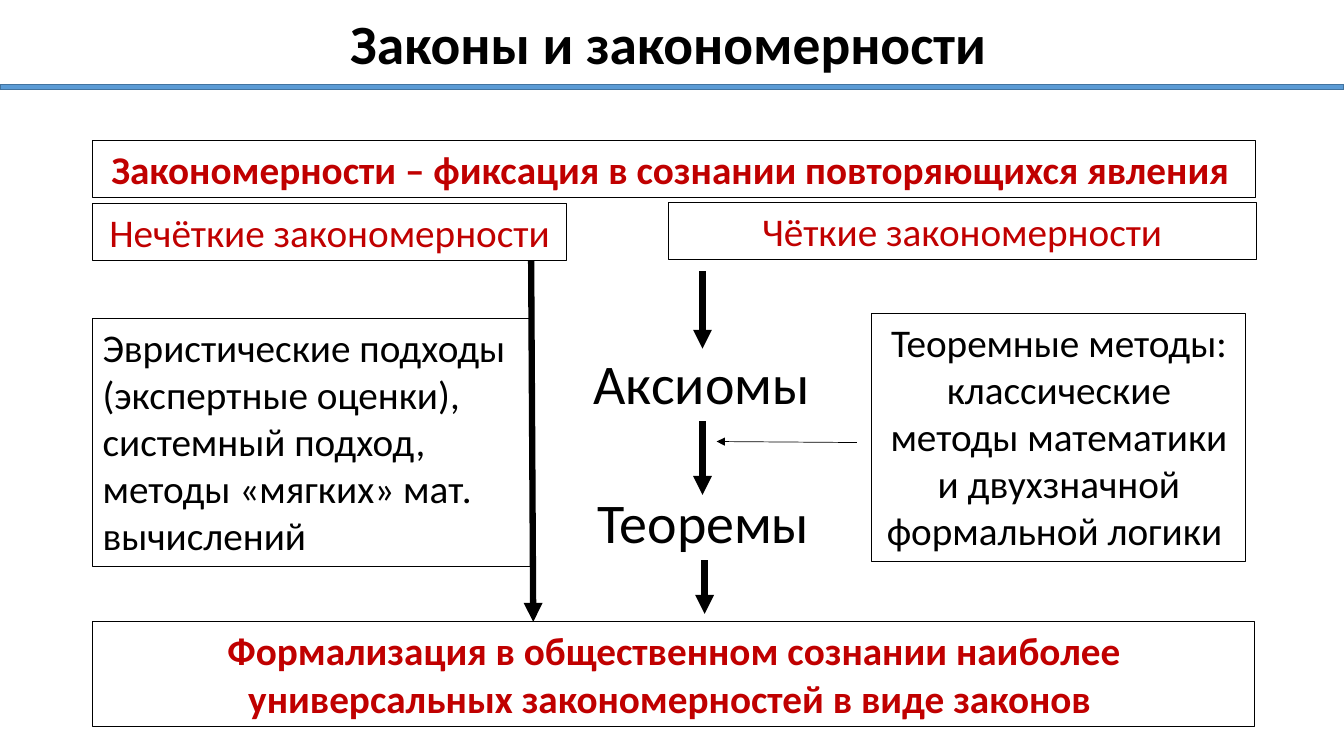
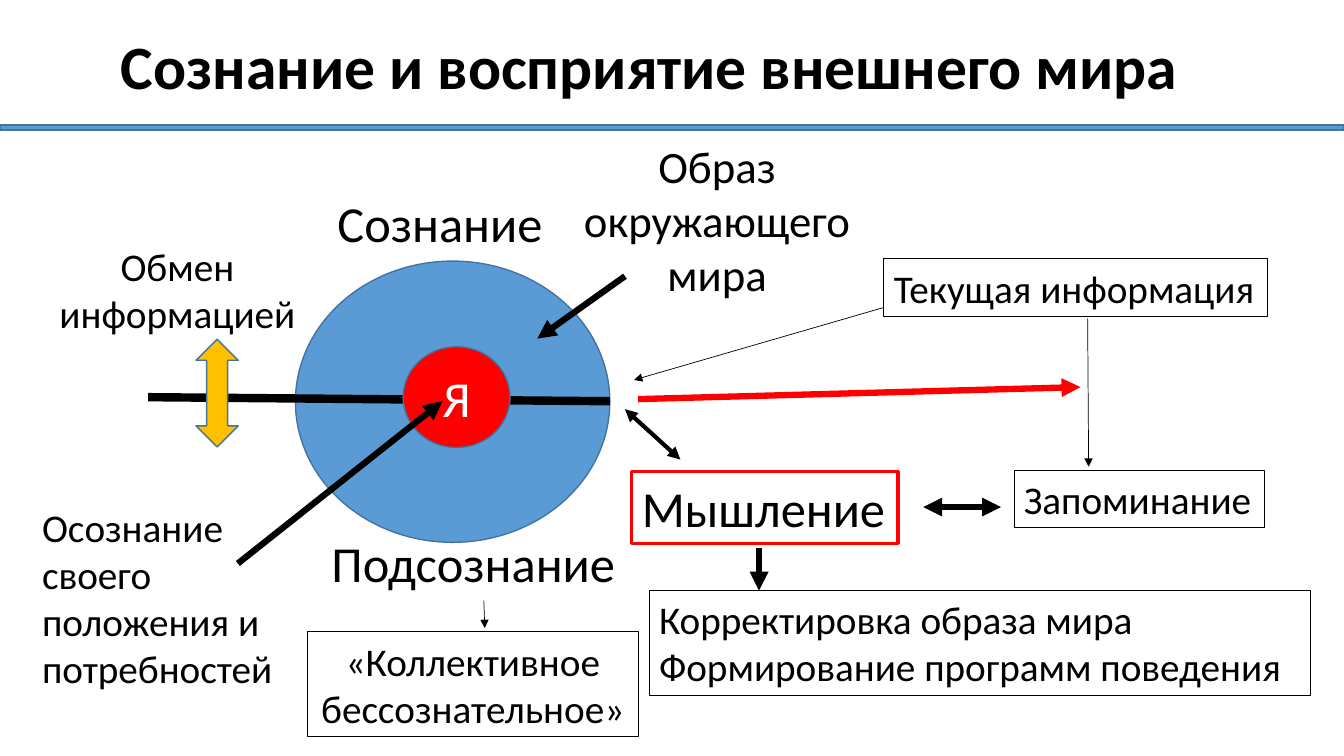
"""Build two slides on regularities, laws and consciousness."""

from dataclasses import dataclass
from typing import Optional, Union

from lxml import etree
from pptx import Presentation
from pptx import util as u
from pptx.dml.color import RGBColor
from pptx.enum import shapes, text
from pptx.oxml import ns
from pptx.shapes.autoshape import Shape
from pptx.slide import Slide
from pptx.text.text import TextFrame


@dataclass(frozen=True)
class Theme:
    font: str = "Calibri"
    black: str = "000000"
    white: str = "FFFFFF"
    dark_red: str = "C00000"
    red: str = "FF0000"
    blue: str = "5B9BD5"
    outline: str = "43739E"
    amber: str = "FFC000"
    body: float = 28
    large: float = 32
    term: float = 36
    stage: float = 40
    title: float = 44
    title_small: float = 39.6
    hairline: float = 0.5
    frame: float = 0.75
    thick: float = 4.5
    width: float = 960
    height: float = 540
    band: float = 3.6


THEME = Theme()
LEFT, CENTER = text.PP_ALIGN.LEFT, text.PP_ALIGN.CENTER
PRESET = shapes.MSO_SHAPE
Area = tuple[float, float, float, float]
Point = tuple[float, float]


@dataclass(frozen=True)
class Label:
    words: str
    area: Area
    size: float = THEME.body
    color: str = THEME.black
    bold: bool = False
    align: text.PP_ALIGN = CENTER
    wrap: bool = True
    border: Optional[str] = THEME.black
    border_width: float = THEME.frame


@dataclass(frozen=True)
class Figure:
    preset: shapes.MSO_SHAPE
    area: Area
    fill: str = THEME.blue
    words: str = ""


@dataclass(frozen=True)
class Arrow:
    start: Point
    end: Point
    width: float = THEME.thick
    color: str = THEME.black
    head: bool = False
    tail: bool = True


Piece = Union[Label, Figure, Arrow]


@dataclass(frozen=True)
class Page:
    title: str
    title_area: Area
    title_size: float
    band_top: float
    pieces: tuple[Piece, ...]


def write_text(frame: TextFrame, words: str, *, size: float, color: str = THEME.black,
               bold: bool = False, align: text.PP_ALIGN = CENTER, wrap: bool = True,
               grow: bool = False, middle: bool = False, spacing: float = 1.0) -> None:
    """Fill a text frame, one paragraph for each line of words."""
    frame.word_wrap = wrap
    frame.auto_size = text.MSO_AUTO_SIZE.SHAPE_TO_FIT_TEXT if grow else text.MSO_AUTO_SIZE.NONE
    frame.vertical_anchor = text.MSO_ANCHOR.MIDDLE if middle else text.MSO_ANCHOR.TOP
    for index, line in enumerate(words.split("\n")):
        para = frame.add_paragraph() if index else frame.paragraphs[0]
        para.alignment = align
        para.line_spacing = spacing
        span = para.add_run()
        span.text = line
        span.font.name = THEME.font
        span.font.size = u.Pt(size)
        span.font.bold = bold
        span.font.color.rgb = RGBColor.from_string(color)


def add_box(page: Slide, area: Area) -> Shape:
    """Add an empty text box."""
    return page.shapes.add_textbox(*map(u.Pt, area))


def draw_label(page: Slide, label: Label) -> None:
    """Draw text with an optional frame."""
    box = add_box(page, label.area)
    if label.border:
        box.line.color.rgb = RGBColor.from_string(label.border)
        box.line.width = u.Pt(label.border_width)
    write_text(box.text_frame, label.words, size=label.size, color=label.color,
               bold=label.bold, align=label.align, wrap=label.wrap, grow=True)


def draw_figure(page: Slide, figure: Figure) -> None:
    """Draw a filled preset shape."""
    shape = page.shapes.add_shape(figure.preset, *map(u.Pt, figure.area))
    shape.shadow.inherit = False
    shape.fill.solid()
    shape.fill.fore_color.rgb = RGBColor.from_string(figure.fill)
    shape.line.color.rgb = RGBColor.from_string(THEME.outline)
    shape.line.width = u.Pt(1)
    if figure.words:
        write_text(shape.text_frame, figure.words, size=THEME.term,
                   color=THEME.white, middle=True)


def draw_arrow(page: Slide, arrow: Arrow) -> None:
    """Draw a straight line with triangles at the chosen ends."""
    connector = page.shapes.add_connector(
        shapes.MSO_CONNECTOR.STRAIGHT, *map(u.Pt, arrow.start + arrow.end))
    connector.line.color.rgb = RGBColor.from_string(arrow.color)
    connector.line.width = u.Pt(arrow.width)
    properties = connector._element.spPr
    stroke = properties.find(ns.qn("a:ln"))
    for shown, tag in ((arrow.head, "a:headEnd"), (arrow.tail, "a:tailEnd")):
        if shown:
            etree.SubElement(stroke, ns.qn(tag), type="triangle")
    etree.SubElement(properties, ns.qn("a:effectLst"))


DRAWERS = {Label: draw_label, Figure: draw_figure, Arrow: draw_arrow}

LAWS = Page("Законы и закономерности", (63.4, 13.7, 828, 39.6), THEME.title_small, 60.5, (
    Label("Закономерности – фиксация в сознании повторяющихся явления ",
          (66.2, 100.1, 830.9, 41), color=THEME.dark_red, bold=True),
    Label("Формализация в общественном сознании наиболее универсальных "
          "закономерностей в виде законов ",
          (66.2, 444.2, 830.2, 74.9), color=THEME.dark_red, bold=True),
    Label("Аксиомы", (416.9, 245.5, 170.6, 55.4), THEME.stage,
          align=LEFT, wrap=False, border=None),
    Label("Теоремы", (419.8, 344.9, 167, 55.4), THEME.stage,
          align=LEFT, wrap=False, border=None),
    Arrow((501.8, 301), (501.8, 353.5)),
    Label("Теоремные методы: классические методы математики и двухзначной "
          "формальной логики ", (622.8, 223.9, 267.1, 177.1)),
    Arrow((612, 316.1), (511.9, 315.4), THEME.hairline),
    Arrow((501.8, 193.7), (501.8, 249.1)),
    Arrow((503.3, 400.3), (503.3, 438.5)),
    Label("Нечёткие закономерности", (66.2, 145.4, 338.4, 41), color=THEME.dark_red),
    Arrow((379.4, 186.5), (380.9, 444.2)),
    Label("Эвристические подходы (экспертные оценки), системный подход, "
          "методы «мягких» мат. вычислений", (66.2, 227.5, 313.9, 177.1), align=LEFT),
    Label("Чёткие закономерности", (477.4, 144.7, 419.8, 41), color=THEME.dark_red),
))

MIND = Page("Сознание и восприятие внешнего мира", (23, 9.4, 882.7, 79.9), THEME.title, 89.3, (
    Figure(PRESET.OVAL, (211, 186.5, 224.6, 200.9)),
    Arrow((105.8, 283.7), (435.6, 286.6), 6, tail=False),
    Figure(PRESET.OVAL, (288, 247.7, 76.3, 72), THEME.red, "Я"),
    Label("Сознание", (234, 133.9, 162.7, 51.1), THEME.term,
          align=LEFT, wrap=False, border=None),
    Label("Подсознание", (229.7, 376.6, 219.6, 51.1), THEME.term,
          align=LEFT, wrap=False, border=None),
    Label("Образ окружающего мира", (401, 95.8, 222.5, 123.8), THEME.large, border=None),
    Arrow((446.4, 197.3), (383.8, 241.9)),
    Figure(PRESET.UP_DOWN_ARROW, (140, 242.3, 30.2, 77), THEME.amber),
    Label("Обмен информацией", (33.8, 169.2, 185.8, 74.9), border=None),
    Label("Осознание своего положения и потребностей",
          (23, 355.7, 218.2, 143.3), align=LEFT, border=None),
    Arrow((169.9, 402.5), (316.1, 286.6)),
    Label("Текущая информация", (631.4, 185, 274.3, 41), align=LEFT, wrap=False),
    Arrow((631.4, 219.6), (452.9, 271.4), THEME.hairline),
    Arrow((776.9, 227.5), (777.6, 333.4), THEME.hairline),
    Label("Запоминание", (724.3, 336.2, 178.6, 41), align=LEFT, wrap=False),
    Arrow((455.8, 285.1), (771.8, 276.5), color=THEME.red),
    Arrow((446.4, 292.3), (486, 328.3), 3, head=True),
    Label("Мышление", (451.4, 337, 190.1, 51.1), THEME.term, align=LEFT, wrap=False,
          border=THEME.red, border_width=2.25),
    Label("Корректировка образа мира\nФормирование программ поведения",
          (463.7, 421.9, 472.3, 74.9), align=LEFT),
    Arrow((542.2, 391.7), (542.2, 421.9)),
    Arrow((659.5, 362.2), (715, 362.2), head=True),
    Label("«Коллективное бессознательное»", (219.6, 451.4, 236.2, 74.9)),
    Arrow((345.6, 429.1), (346.3, 448.6), THEME.hairline),
))


def draw_page(page: Slide, content: Page) -> None:
    """Draw the title, the pieces and the band of one slide."""
    write_text(add_box(page, content.title_area).text_frame, content.title,
               size=content.title_size, bold=True, middle=True, spacing=0.9)
    band = Figure(PRESET.RECTANGLE, (0, content.band_top, THEME.width, THEME.band))
    for piece in (*content.pieces, band):
        DRAWERS[type(piece)](page, piece)


def main() -> None:
    """Build and save the deck."""
    deck = Presentation()
    deck.slide_width, deck.slide_height = u.Pt(THEME.width), u.Pt(THEME.height)
    for content in (LAWS, MIND):
        draw_page(deck.slides.add_slide(deck.slide_layouts[6]), content)
    deck.save("out.pptx")


if __name__ == "__main__":
    main()
